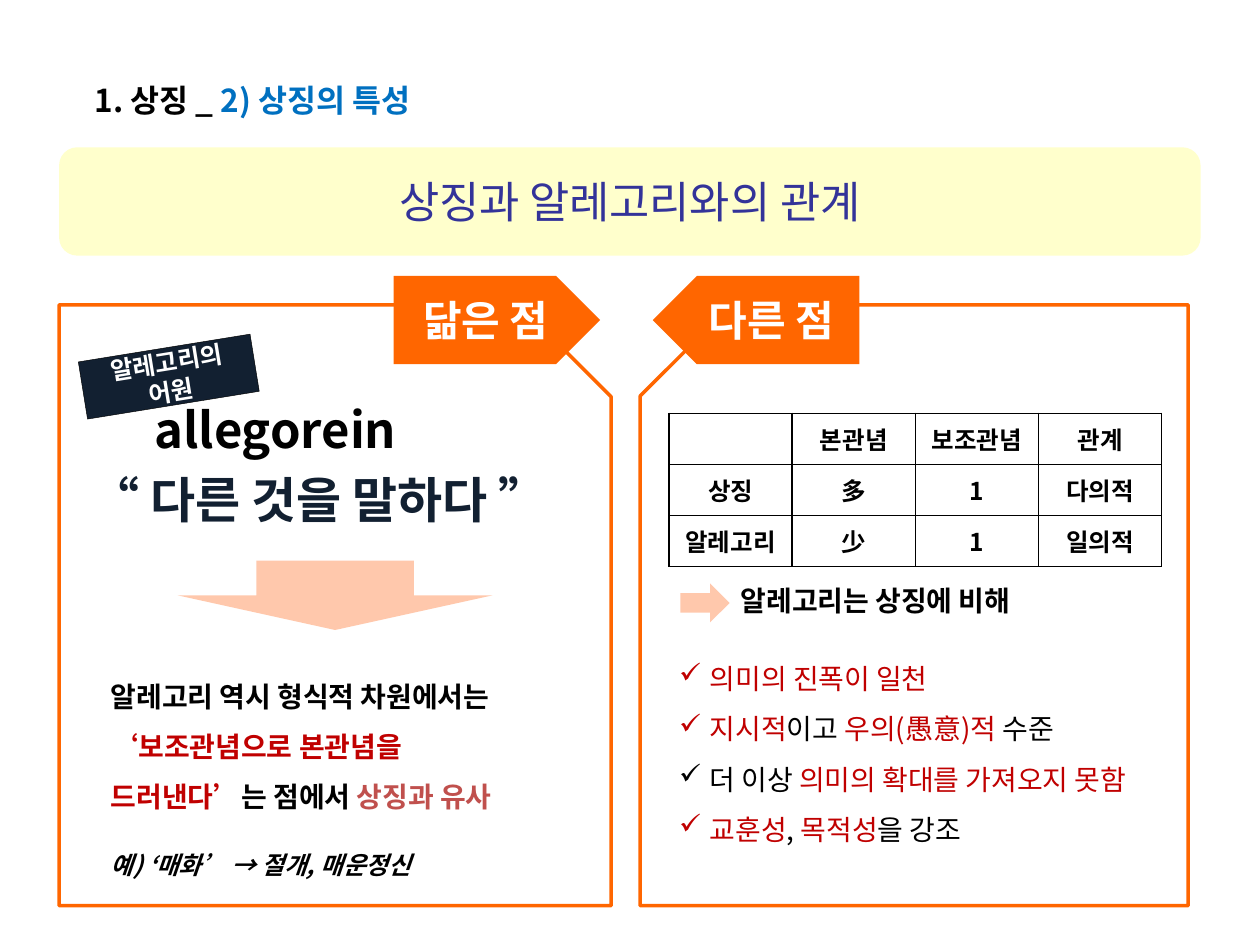
from lxml.etree import SubElement
from pptx import Presentation
from pptx.dml.color import RGBColor
from pptx.enum.shapes import MSO_SHAPE
from pptx.enum.text import MSO_ANCHOR, MSO_AUTO_SIZE, PP_ALIGN
from pptx.oxml.ns import qn
from pptx.util import Pt

FONT = "Noto Sans CJK KR"
BLACK, WHITE, NAVY, RED = "000000", "FFFFFF", "122031", "C00000"
ORANGE, PEACH = "FF6600", "FF925B"

TITLE = [[("1. 상징 _", BLACK), (" 2) 상징의 특성", "0070C0")]]
BANNER = [[("상징과 알레고리와의 관계", "333399")]]
ORIGIN_TAG = [[("알레고리의", WHITE)], [("어원", WHITE)]]
ORIGIN_WORD = [[("allegorein", BLACK)]]
ORIGIN_MEANING = [[("“ 다른 것을 말하다 ”", NAVY)]]
ALIKE = [[("닮은 점", WHITE)]]
DIFFERENT = [[("다른 점", WHITE)]]
SIMILARITY = [[
    ("알레고리 역시 형식적 차원에서는 ", BLACK),
    ("‘보조관념으로 본관념을 드러낸다’", RED),
    ("는 점에서 ", BLACK),
    ("상징과 유사", "C0504D"),
]]
EXAMPLE = [[("예) ‘매화’ → 절개, 매운정신", BLACK)]]
COMPARISON = [
    ["", "본관념", "보조관념", "관계"],
    ["상징", "多", "1", "다의적"],
    ["알레고리", "少", "1", "일의적"],
]
CONTRAST_LEAD = [[("알레고리는 상징에 비해", BLACK)]]
CONTRASTS = [
    [("의미의 진폭이 일천", RED)],
    [("지시적", RED), ("이고 ", BLACK), ("우의(愚意)적 ", RED), ("수준", BLACK)],
    [("더 이상 ", BLACK), ("의미의 확대를 가져오지 못함", RED)],
    [("교훈성", RED), (", ", BLACK), ("목적성", RED), ("을 강조", BLACK)],
]


def color(value):
    return RGBColor.from_string(value)


def add_bullet(paragraph, character, indent):
    properties = paragraph._p.get_or_add_pPr()
    properties.set("marL", str(Pt(indent)))
    properties.set("indent", str(-Pt(indent)))
    SubElement(properties, qn("a:buChar")).set("char", character)


def write(frame, paragraphs, size=14, bold=True, italic=False, align=PP_ALIGN.LEFT,
          anchor=MSO_ANCHOR.MIDDLE, spacing=None, bullet=None):
    frame.word_wrap = True
    frame.vertical_anchor = anchor
    for index, runs in enumerate(paragraphs):
        paragraph = frame.add_paragraph() if index else frame.paragraphs[0]
        paragraph.alignment = align
        if spacing:
            paragraph.line_spacing = spacing
        if bullet:
            add_bullet(paragraph, bullet, 17.5)
        for text, run_color in runs:
            run = paragraph.add_run()
            run.text = text
            run.font.size = Pt(size)
            run.font.bold = bold
            run.font.italic = italic
            run.font.color.rgb = color(run_color)
            run.font.name = FONT
            SubElement(run._r.get_or_add_rPr(), qn("a:ea")).set("typeface", FONT)


def add_text(slide, box, paragraphs, **text_format):
    shape = slide.shapes.add_textbox(*map(Pt, box))
    write(shape.text_frame, paragraphs, **text_format)
    return shape


def add_shape(slide, kind, box, fill, line=None, width=1, rotation=0, flip=False, alpha=None):
    shape = slide.shapes.add_shape(kind, *map(Pt, box))
    shape.shadow.inherit = False
    shape.rotation = rotation
    shape.fill.solid()
    shape.fill.fore_color.rgb = color(fill)
    if alpha:
        fill_color = shape._element.spPr.find(qn("a:solidFill"))[0]
        SubElement(fill_color, qn("a:alpha")).set("val", str(alpha * 1000))
    if line:
        shape.line.color.rgb = color(line)
        shape.line.width = Pt(width)
    else:
        shape.line.fill.background()
    if flip:
        shape._element.spPr.xfrm.set("flipH", "1")
    return shape


def add_borders(cell, line_color, width):
    properties = cell._tc.get_or_add_tcPr()
    for index, side in enumerate(("lnL", "lnR", "lnT", "lnB")):
        border = properties.makeelement(qn(f"a:{side}"), {"w": str(Pt(width))})
        fill = SubElement(border, qn("a:solidFill"))
        SubElement(fill, qn("a:srgbClr")).set("val", line_color)
        properties.insert(index, border)


def add_comparison(slide, left, top, column_width, row_height):
    rows, columns = len(COMPARISON), len(COMPARISON[0])
    table = slide.shapes.add_table(
        rows, columns, Pt(left), Pt(top),
        Pt(columns * column_width), Pt(rows * row_height)).table
    table.first_row = table.horz_banding = False
    for row, texts in zip(table.rows, COMPARISON):
        row.height = Pt(row_height)
        for cell, text in zip(row.cells, texts):
            cell.fill.background()
            cell.vertical_anchor = MSO_ANCHOR.MIDDLE
            add_borders(cell, BLACK, 1)
            write(cell.text_frame, [[(text, BLACK)]], align=PP_ALIGN.CENTER)


def main():
    """Build the slide that compares symbol and allegory."""
    presentation = Presentation()
    presentation.slide_width, presentation.slide_height = Pt(720), Pt(540)
    slide = presentation.slides.add_slide(presentation.slide_layouts[5])
    center = PP_ALIGN.CENTER

    panel_top, panel_height = 174.2, 343.4
    for left, width, flip in ((33.8, 315.4, False), (365.8, 313.2, True)):
        add_shape(slide, MSO_SHAPE.SNIP_1_RECTANGLE, (left, panel_top, width, panel_height),
                  WHITE, line=ORANGE, width=2, flip=flip)

    title = slide.shapes.title
    title.left, title.top, title.width, title.height = map(Pt, (46.8, 42.5, 352.8, 28.8))
    title.text_frame.auto_size = MSO_AUTO_SIZE.NONE
    write(title.text_frame, TITLE, size=18, anchor=MSO_ANCHOR.TOP)

    banner = add_shape(slide, MSO_SHAPE.ROUNDED_RECTANGLE, (33.8, 84.2, 652.3, 61.9), "FFFFCC")
    write(banner.text_frame, BANNER, size=25, bold=False, align=center)

    add_text(slide, (78.5, 224.6, 157.7, 41), ORIGIN_WORD, size=28, align=center)
    add_text(slide, (44.6, 265, 292.3, 41), ORIGIN_MEANING, size=28, anchor=MSO_ANCHOR.TOP)
    tag = add_shape(slide, MSO_SHAPE.RECTANGLE, (46.8, 198.7, 99.4, 33.1), NAVY,
                    line=BLACK, width=0.25, rotation=350.8)
    write(tag.text_frame, ORIGIN_TAG, align=center)

    alike = add_shape(slide, MSO_SHAPE.PENTAGON, (224.9, 157.7, 118.1, 50.4), ORANGE)
    write(alike.text_frame, ALIKE, size=24, align=center)
    add_shape(slide, MSO_SHAPE.PENTAGON, (373, 157.7, 118.1, 50.4), ORANGE, rotation=180)
    add_text(slide, (388, 157.7, 105.5, 50.4), DIFFERENT, size=24, align=center)

    add_shape(slide, MSO_SHAPE.DOWN_ARROW, (101.5, 320.4, 180, 39.6), PEACH, alpha=50)
    add_text(slide, (56.2, 376.6, 264.2, 90), SIMILARITY, size=16, spacing=1.5)
    add_text(slide, (56.2, 481.7, 264.2, 24.5), EXAMPLE, italic=True)

    add_comparison(slide, 382.3, 236.2, 70.4, 29.2)
    add_shape(slide, MSO_SHAPE.DOWN_ARROW, (391.7, 330.5, 22.3, 28.1), PEACH,
              rotation=270, alpha=50)
    add_text(slide, (416.2, 329.8, 243.4, 26.6), CONTRAST_LEAD, size=16)
    contrasts = add_text(slide, (388.1, 373.7, 286.6, 104.4), CONTRASTS,
                         size=16, bold=False, spacing=1.5, bullet="✓")
    contrasts.text_frame.margin_left = contrasts.text_frame.margin_right = 0

    presentation.save("out.pptx")


if __name__ == "__main__":
    main()
